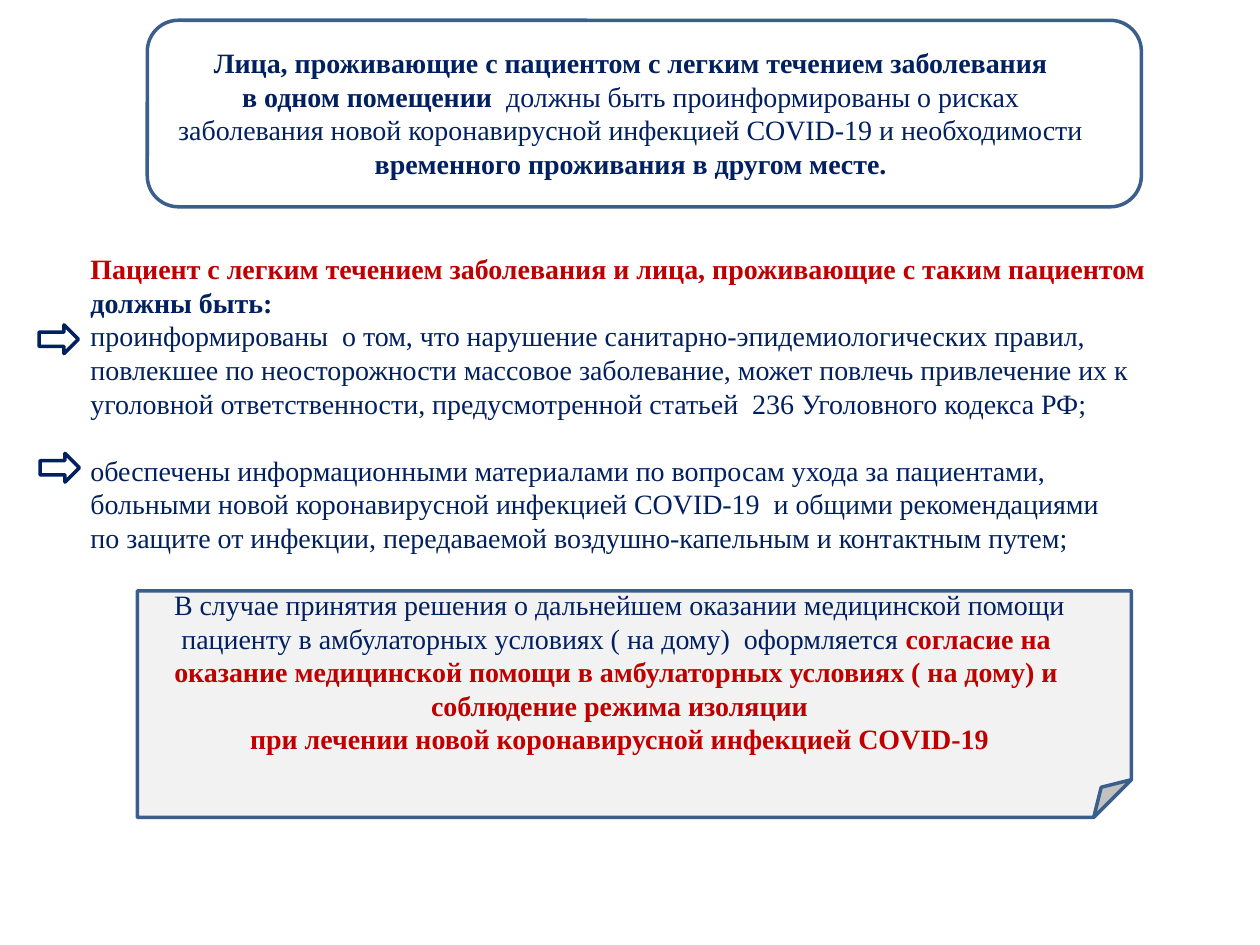
from pptx import Presentation
from pptx.dml.color import RGBColor
from pptx.enum.shapes import MSO_SHAPE
from pptx.enum.text import MSO_ANCHOR, MSO_AUTO_SIZE, PP_ALIGN
from pptx.oxml.ns import qn
from pptx.util import Cm, Pt
from lxml.etree import SubElement

NAVY, RED, BLUE, GREY = "002060", "C00000", "3A5F8C", "F2F2F2"
FONT, SIZE, PITCH = "Times New Roman", Pt(16), Pt(19.2)
LEFT, MID = PP_ALIGN.LEFT, PP_ALIGN.CENTER

# A run is (text, colour, bold)
HEAD = [
    [("Лица, проживающие с пациентом с легким течением заболевания", NAVY, True)],
    [("в одном помещении  ", NAVY, True),
     ("должны быть проинформированы о рисках", NAVY, False)],
    [("заболевания новой коронавирусной инфекцией COVID-19 и необходимости", NAVY, False)],
    [("временного проживания в другом месте.", NAVY, True)],
]
# Each block is (alignment, lines); a gap of one line parts the blocks
BODY = [
    (LEFT, [
        [("Пациент с легким течением заболевания и лица, проживающие с таким пациентом", RED, True)],
        [("должны быть:", NAVY, True)],
        [("проинформированы  о том, что нарушение санитарно-эпидемиологических правил,", NAVY, False)],
        [("повлекшее по неосторожности массовое заболевание, может повлечь привлечение их к", NAVY, False)],
        [("уголовной ответственности, предусмотренной статьей  236 Уголовного кодекса РФ;", NAVY, False)],
    ]),
    (LEFT, [
        [("обеспечены информационными материалами по вопросам ухода за пациентами,", NAVY, False)],
        [("больными новой коронавирусной инфекцией COVID-19  и общими рекомендациями", NAVY, False)],
        [("по защите от инфекции, передаваемой воздушно-капельным и контактным путем;", NAVY, False)],
    ]),
    (MID, [
        [("В случае принятия решения о дальнейшем оказании медицинской помощи", NAVY, False)],
        [("пациенту в амбулаторных условиях ( на дому)  оформляется ", NAVY, False),
         ("согласие на ", RED, True)],
        [("оказание медицинской помощи в амбулаторных условиях ( на дому) и ", RED, True)],
        [("соблюдение режима изоляции", RED, True)],
        [(" при лечении новой коронавирусной инфекцией COVID-19 ", RED, True)],
    ]),
]


def color(code):
    return RGBColor.from_string(code)


def place(item, x, y, w, h):
    item.left, item.top, item.width, item.height = Cm(x), Cm(y), Cm(w), Cm(h)


def shape(slide, kind, x, y, w, h, line, fill=None):
    item = slide.shapes.add_shape(kind, Cm(x), Cm(y), Cm(w), Cm(h))
    item.shadow.inherit = False
    item.line.color.rgb = color(line)
    item.line.width = Pt(2)
    if fill:
        item.fill.solid()
        item.fill.fore_color.rgb = color(fill)
    else:
        item.fill.background()
    return item


def write(holder, blocks):
    frame = holder.text_frame
    frame.word_wrap = True
    frame.auto_size = MSO_AUTO_SIZE.NONE
    frame.vertical_anchor = MSO_ANCHOR.TOP
    first = True
    for align, lines in blocks:
        for num, runs in enumerate(lines):
            para = frame.paragraphs[0] if first else frame.add_paragraph()
            para.alignment = align
            para.line_spacing = PITCH
            para.space_before = PITCH if num == 0 and not first else Pt(0)
            para.space_after = Pt(0)
            props = para._p.get_or_add_pPr()
            props.set("marL", "0")
            props.set("indent", "0")
            SubElement(props, qn("a:buNone"))
            for text, code, bold in runs:
                run = para.add_run()
                run.text = text
                run.font.name, run.font.size = FONT, SIZE
                run.font.bold = bold
                run.font.color.rgb = color(code)
            first = False


# Heading text inside a rounded frame
def head(slide, x, y, w, h):
    shape(slide, MSO_SHAPE.ROUNDED_RECTANGLE, x, y, w, h, BLUE)
    title = slide.shapes.title
    place(title, x + 0.13, y + 0.38, 19.23, 4.52)
    write(title, [(MID, HEAD)])


# Main text, with an arrow at each duty and a note sheet behind its end
def body(slide, x, y, w, h):
    text = slide.placeholders[1]
    place(text, x, y, w, h)
    write(text, BODY)
    note = shape(slide, MSO_SHAPE.FOLDED_CORNER, x + 1.2, y + 6.96, 20.04, 4.57, BLUE, GREY)
    slide.shapes._spTree.insert(2, note._element)
    for dx, dy in ((-0.78, 1.6), (-0.76, 4.19)):
        shape(slide, MSO_SHAPE.RIGHT_ARROW, x + dx, y + dy, 0.79, 0.58, NAVY)


def main():
    deck = Presentation()
    deck.slide_width, deck.slide_height = Cm(25.4), Cm(19.05)
    slide = deck.slides.add_slide(deck.slide_layouts[1])
    head(slide, 2.97, 0.41, 20.04, 3.76)
    body(slide, 1.57, 4.95, 21.84, 10.52)
    deck.save("out.pptx")


if __name__ == "__main__":
    main()
